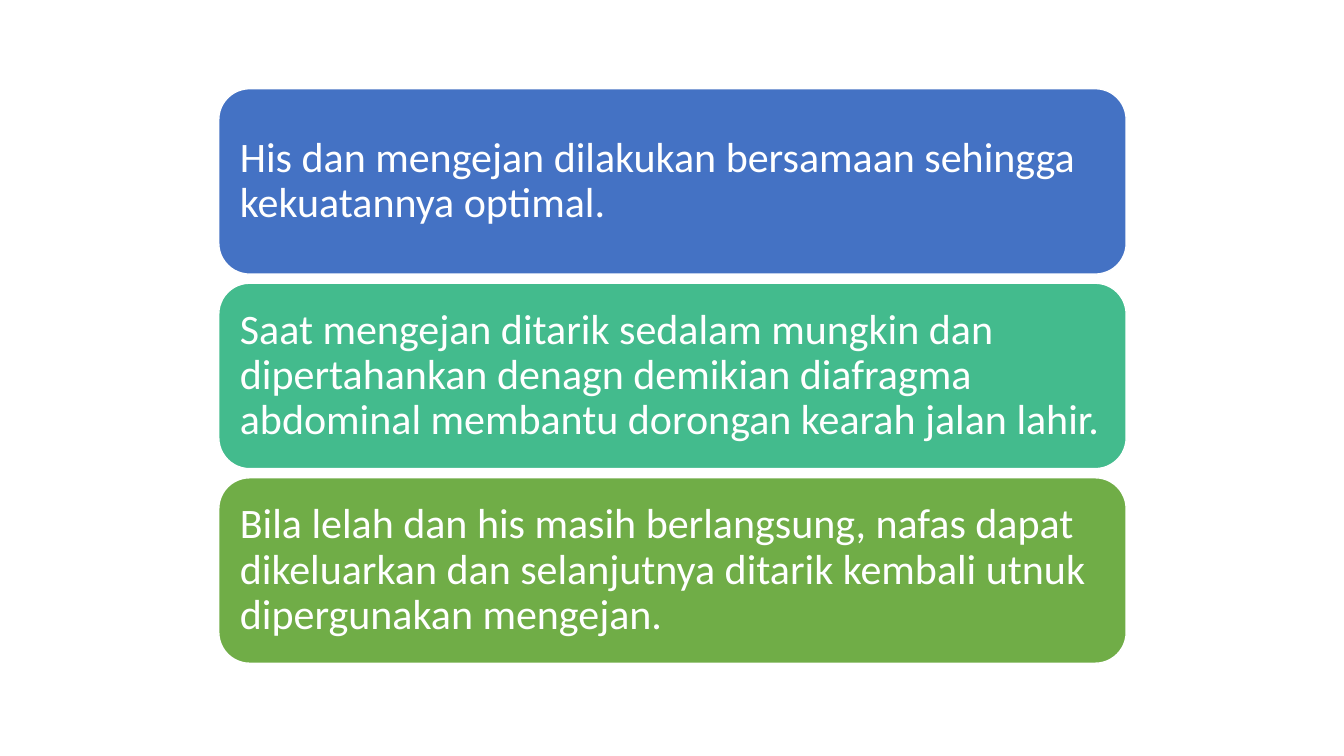
from pptx import Presentation
from pptx.dml.color import RGBColor as RGB
from pptx.enum.shapes import MSO_SHAPE as Shape
from pptx.enum.text import MSO_ANCHOR as Anchor, PP_ALIGN as Align
from pptx.util import Inches, Pt

COLORS = {"blue": "4472C4", "teal": "43BB8D", "green": "70AD47", "white": "FFFFFF"}
FONT = "Calibri"
LEFT, TOP, WIDTH, HEIGHT = 2.17, 0.88, 9, 1.84
STEP = 1.93
INSET = 0.12

CARDS = [
    ("blue", "His dan mengejan dilakukan bersamaan sehingga kekuatannya optimal."),
    ("teal", "Saat mengejan ditarik sedalam mungkin dan dipertahankan denagn "
             "demikian diafragma abdominal membantu dorongan kearah jalan lahir."),
    ("green", "Bila lelah dan his masih berlangsung, nafas dapat dikeluarkan dan "
              "selanjutnya ditarik kembali utnuk dipergunakan mengejan."),
]


def tint(name):
    return RGB.from_string(COLORS[name])


def fill_text(frame, text):
    frame.word_wrap = True
    frame.vertical_anchor = Anchor.MIDDLE
    frame.margin_left = frame.margin_right = Inches(INSET)
    frame.margin_top = frame.margin_bottom = Inches(INSET)
    frame.text = text
    para = frame.paragraphs[0]
    para.alignment = Align.LEFT
    para.line_spacing = 0.9
    font = para.runs[0].font
    font.name, font.size = FONT, Pt(30)
    font.color.rgb = tint("white")


def add_card(slide, row, color, text):
    card = slide.shapes.add_shape(
        Shape.ROUNDED_RECTANGLE, Inches(LEFT), Inches(TOP + row * STEP),
        Inches(WIDTH), Inches(HEIGHT))
    card.shadow.inherit = False
    card.fill.solid()
    card.fill.fore_color.rgb = tint(color)
    card.line.color.rgb = tint("white")
    card.line.width = Pt(1)
    fill_text(card.text_frame, text)


def main():
    deck = Presentation()
    deck.slide_width, deck.slide_height = Inches(13.33), Inches(7.5)
    slide = deck.slides.add_slide(deck.slide_layouts[6])
    for row, (color, text) in enumerate(CARDS):
        add_card(slide, row, color, text)
    deck.save("out.pptx")


if __name__ == "__main__":
    main()
